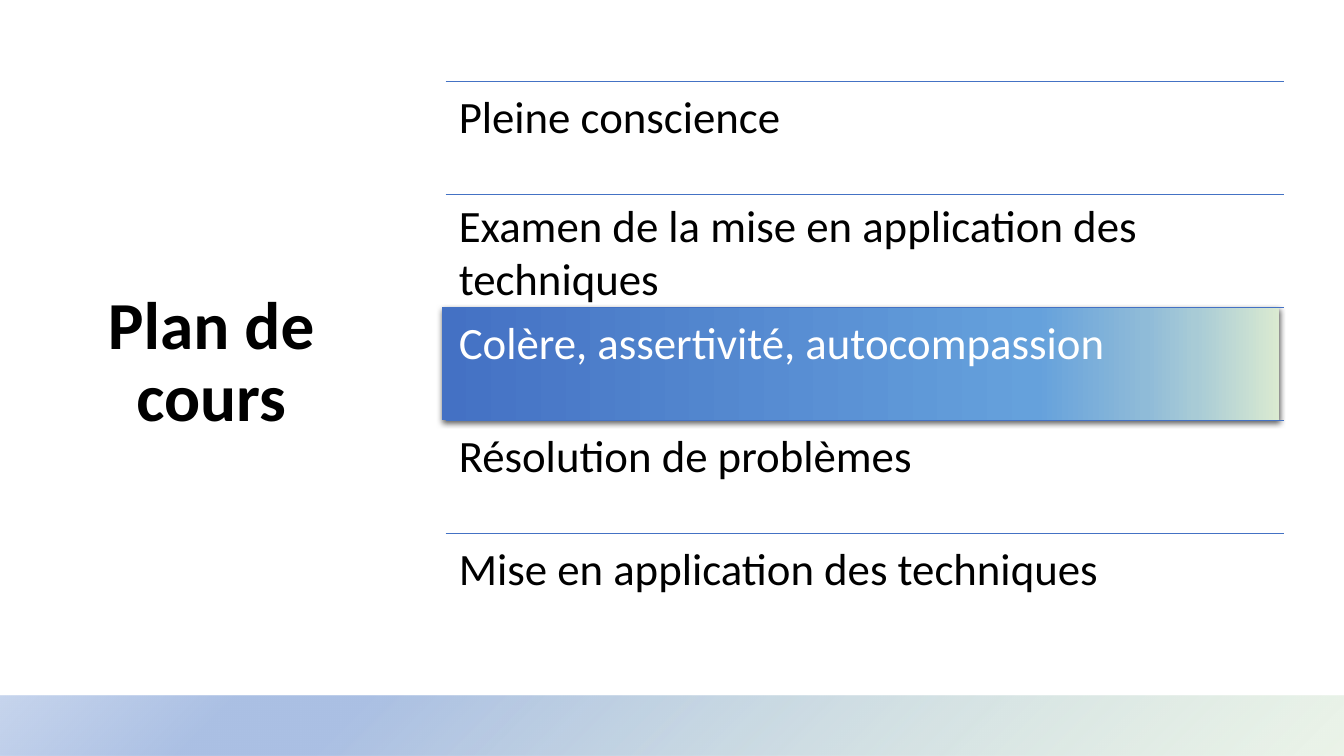
import dataclasses

import pptx
import pptx.dml.color
import pptx.enum.shapes
import pptx.enum.text
import pptx.oxml
import pptx.oxml.ns
import pptx.util

PX = 9144
ANCHOR = pptx.enum.text.MSO_ANCHOR
ALIGN = pptx.enum.text.PP_ALIGN


@dataclasses.dataclass(frozen=True)
class Theme:
    """Hold the colours, font and type sizes."""
    font: str = "Calibri"
    ink: str = "000000"
    light: str = "FFFFFF"
    rule: str = "4472C4"
    title: int = 48
    item: int = 32
    band: tuple = ((0, "D6E8D1", 47), (74, "ABC0E4", 100),
                   (83, "ABC0E4", 100), (100, "C7D5ED", 100))
    glow: tuple = ((0, "4471C4", 100), (71, "65A1DC", 100), (84, "8FBBD8", 100),
                   (90, "A8CBD6", 100), (100, "DAEAD1", 100))


THEME = Theme()
CIRCLE = ('<a:path path="circle"><a:fillToRect l="100000" t="100000"/></a:path>'
          '<a:tileRect r="-100000" b="-100000"/>')
ACROSS = '<a:lin ang="0" scaled="0"/>'
SHADOW = ('<a:outerShdw {ns} blurRad="57150" dist="19050" dir="5400000" algn="ctr" '
          'rotWithShape="0"><a:srgbClr val="{ink}"><a:alpha val="63000"/>'
          '</a:srgbClr></a:outerShdw>')
ITEMS = (
    ("Pleine conscience",),
    ("Examen de la mise en application des", "techniques"),
    ("Colère, assertivité, autocompassion",),
    ("Résolution de problèmes",),
    ("Mise en application des techniques",),
)
ACTIVE = 2


def scale(*sizes):
    """Turn px lengths into EMU."""
    return [pptx.util.Emu(size * PX) for size in sizes]


def make(xml):
    """Parse a drawing element that has a slot for its namespace."""
    return pptx.oxml.parse_xml(
        xml.format(ns=pptx.oxml.ns.nsdecls("a"), ink=THEME.ink))


def add_bar(slide, box, stops, mode):
    """Draw a rectangle with a gradient and return it."""
    bar = slide.shapes.add_shape(
        pptx.enum.shapes.MSO_SHAPE.RECTANGLE, *scale(*box))
    bar.shadow.inherit = False
    bar.line.fill.background()
    bar.fill.background()
    marks = "".join(
        f'<a:gs pos="{pos * 1000}"><a:srgbClr val="{tone}">'
        f'<a:alpha val="{alpha * 1000}"/></a:srgbClr></a:gs>'
        for pos, tone, alpha in stops)
    fill = make('<a:gradFill {ns} rotWithShape="1"><a:gsLst>'
                + marks + "</a:gsLst>" + mode + "</a:gradFill>")
    props = bar.element.spPr
    props.replace(props.find(pptx.oxml.ns.qn("a:noFill")), fill)
    return bar


def add_text(shapes, box, lines, size, tone, bold=False, align=ALIGN.LEFT,
             anchor=ANCHOR.TOP, lead=0.9, after=0, inset=None):
    """Place one paragraph per line in a text box."""
    frame = shapes.add_textbox(*scale(*box)).text_frame
    frame.word_wrap = True
    frame.vertical_anchor = anchor
    if inset is not None:
        (pad,) = scale(inset)
        frame.margin_left = frame.margin_right = pad
        frame.margin_top = frame.margin_bottom = pad
    for index, line in enumerate(lines):
        para = frame.add_paragraph() if index else frame.paragraphs[0]
        para.text = line
        para.alignment = align
        para.line_spacing = lead
        para.space_after = pptx.util.Pt(after)
        para.font.name = THEME.font
        para.font.size = pptx.util.Pt(size)
        para.font.bold = bold
        para.font.color.rgb = pptx.dml.color.RGBColor.from_string(tone)


def add_rule(shapes, left, top, width):
    """Draw a thin level line."""
    rule = shapes.add_connector(
        pptx.enum.shapes.MSO_CONNECTOR.STRAIGHT,
        *scale(left, top, left + width, top))
    rule.line.color.rgb = pptx.dml.color.RGBColor.from_string(THEME.rule)
    rule.line.width = pptx.util.Pt(1)
    rule.element.spPr.append(make("<a:effectLst {ns}/>"))


def add_focus(slide, box):
    """Mark the current row with a shaded bar."""
    bar = add_bar(slide, box, THEME.glow, ACROSS)
    effects = bar.element.spPr.find(pptx.oxml.ns.qn("a:effectLst"))
    effects.append(make(SHADOW))


def add_title(slide, box):
    """Place the slide title."""
    add_text(slide.shapes, box, ("Plan de cours",), THEME.title, THEME.ink,
             bold=True, align=ALIGN.CENTER, anchor=ANCHOR.MIDDLE, after=6)


def add_list(slide, box):
    """Stack the ruled course items in equal rows."""
    left, top, width, height = box
    step = height // len(ITEMS)
    add_focus(slide, (left - 4, top + ACTIVE * step, width, step))
    shapes = slide.shapes.add_group_shape().shapes
    for index, lines in enumerate(ITEMS):
        row = top + index * step
        single = len(lines) == 1
        add_rule(shapes, left, row, width)
        add_text(shapes, (left, row, width, step), lines, THEME.item,
                 THEME.light if index == ACTIVE else THEME.ink,
                 anchor=ANCHOR.TOP if single else ANCHOR.MIDDLE,
                 lead=0.9 if single else 1.0,
                 after=11 if single else 0, inset=13)


def main():
    """Build and save the slide."""
    deck = pptx.Presentation()
    deck.slide_width, deck.slide_height = scale(1333, 750)
    slide = deck.slides.add_slide(deck.slide_layouts[6])
    add_bar(slide, (0, 690, 1333, 60), THEME.band, CIRCLE)
    add_list(slide, (442, 81, 831, 560))
    add_title(slide, (84, 178, 251, 366))
    deck.save("out.pptx")


if __name__ == "__main__":
    main()
